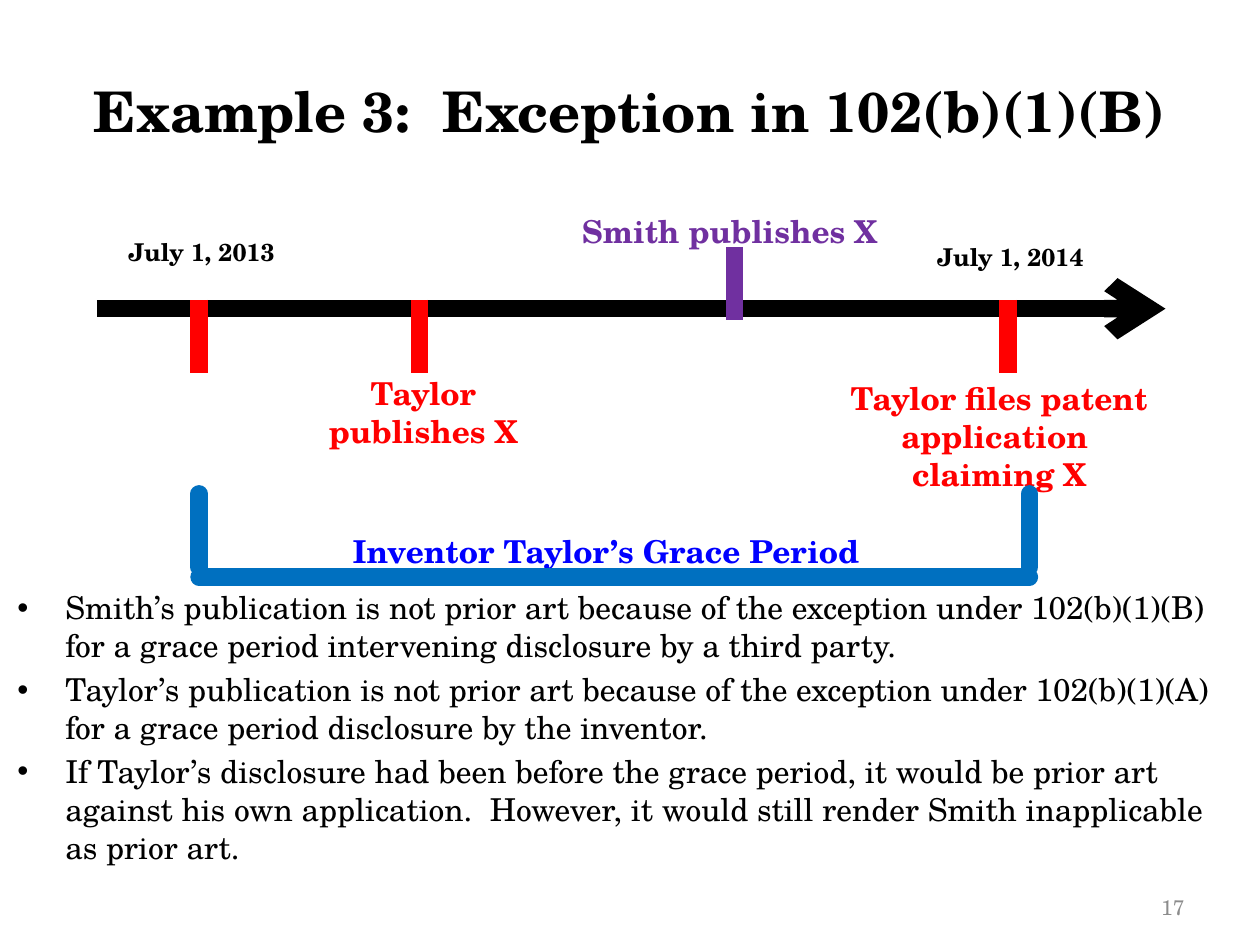
from lxml import etree
from pptx import Presentation
from pptx.dml.color import RGBColor
from pptx.enum import shapes, text
from pptx.oxml.ns import qn
from pptx.util import Inches, Pt

FONT = "TeX Gyre Schola"
BLACK = RGBColor(0x00, 0x00, 0x00)
GRAY = RGBColor(0x8C, 0x8C, 0x8C)
RED = RGBColor(0xFF, 0x00, 0x00)
PURPLE = RGBColor(0x70, 0x30, 0xA0)
BLUE = RGBColor(0x00, 0x00, 0xFF)
BRACKET_BLUE = RGBColor(0x00, 0x70, 0xC0)
LEFT, CENTER, RIGHT = text.PP_ALIGN.LEFT, text.PP_ALIGN.CENTER, text.PP_ALIGN.RIGHT
TOP, MIDDLE, BOTTOM = text.MSO_ANCHOR.TOP, text.MSO_ANCHOR.MIDDLE, text.MSO_ANCHOR.BOTTOM

# Content: wording, (left, top, width, height), size, colour, bold, alignment, anchor
LABELS = [
    ("Example 3:  Exception in 102(b)(1)(B)", (0, 0.25, 10, 1.25), 32, BLACK, True, CENTER, MIDDLE),
    ("17", (7.17, 6.83, 2.33, 0.52), 12, GRAY, False, RIGHT, BOTTOM),
    ("July 1, 2013", (0.92, 1.83, 1.54, 0.34), 14, BLACK, True, LEFT, TOP),
    ("July 1, 2014", (7.34, 1.87, 1.54, 0.34), 14, BLACK, True, LEFT, TOP),
    ("Smith publishes X", (4.5, 1.63, 2.58, 0.4), 18, PURPLE, True, CENTER, TOP),
    ("Taylor publishes X", (2.36, 2.92, 2, 0.71), 18, RED, True, CENTER, TOP),
    ("Taylor files patent application \nclaiming X", (6.58, 2.96, 2.7, 1.01), 18, RED, True, CENTER, TOP),
    ("Inventor Taylor’s Grace Period", (2.7, 4.17, 4.67, 0.4), 18, BLUE, True, LEFT, TOP),
]
NOTES = [
    "Smith’s publication is not prior art because of the exception under 102(b)(1)(B) "
    "for a grace period intervening disclosure by a third party.",
    "Taylor’s publication is not prior art because of the exception under 102(b)(1)(A) "
    "for a grace period disclosure by the inventor.",
    "If Taylor’s disclosure had been before the grace period, it would be prior art against "
    "his own application.  However, it would still render Smith inapplicable as prior art.",
]
NOTES_AREA = (0.04, 4.62, 9.75, 1.75)
NOTE_INDENT = Inches(0.38)

# Timeline geometry in inches
AXIS_START, AXIS_END, AXIS_Y = 0.77, 9.25, 2.45
TICK = 0.58
TICKS = [(1.58, 2.38, RED), (3.33, 2.38, RED), (8, 2.38, RED), (5.83, 1.96, PURPLE)]
BRACKET_LEFT, BRACKET_RIGHT, BRACKET_TOP, BRACKET_BASE = 1.58, 8.17, 3.92, 4.58


def style(para, size, color, bold=False, align=LEFT):
    para.alignment = align
    for span in para.runs:
        for name, value in dict(name=FONT, size=Pt(size), bold=bold).items():
            setattr(span.font, name, value)
        span.font.color.rgb = color


def add_box(page, area, anchor=TOP):
    frame = page.shapes.add_textbox(*map(Inches, area)).text_frame
    frame.word_wrap = True
    frame.vertical_anchor = anchor
    return frame


def add_line(parent, start, end, color, rounded=False, arrow=False):
    ends = map(Inches, (*start, *end))
    line = parent.shapes.add_connector(shapes.MSO_CONNECTOR.STRAIGHT, *ends)
    line.line.width = Pt(10)
    line.line.color.rgb = color
    outline = line.line._get_or_add_ln()
    if rounded:
        outline.set("cap", "rnd")
        etree.SubElement(outline, qn("a:round"))
    if arrow:
        etree.SubElement(outline, qn("a:tailEnd"), type="arrow")
    etree.SubElement(line._element.spPr, qn("a:effectLst"))


def add_bullet(para):
    props = para._p.get_or_add_pPr()
    props.set("marL", str(NOTE_INDENT))
    props.set("indent", str(-NOTE_INDENT))
    etree.SubElement(props, qn("a:buFont"), typeface="Arial")
    etree.SubElement(props, qn("a:buChar"), char="•")


def main():
    deck = Presentation()
    deck.slide_width, deck.slide_height = Inches(10), Inches(7.5)
    page = deck.slides.add_slide(deck.slide_layouts[6])

    # Timeline axis and event ticks
    add_line(page, (AXIS_START, AXIS_Y), (AXIS_END, AXIS_Y), BLACK, arrow=True)
    for x, y, color in TICKS:
        add_line(page, (x, y), (x, y + TICK), color)

    # Title, page number and event labels
    for words, area, size, color, bold, align, anchor in LABELS:
        para = add_box(page, area, anchor).paragraphs[0]
        para.text = words
        style(para, size, color, bold, align)

    # Bulleted explanation
    frame = add_box(page, NOTES_AREA)
    for index, words in enumerate(NOTES):
        para = frame.add_paragraph() if index else frame.paragraphs[0]
        add_bullet(para)
        para.text = words
        style(para, 18, BLACK)
        if index:
            para.space_before = Pt(3.6)

    # Grace period bracket
    bracket = page.shapes.add_group_shape()
    for x in (BRACKET_LEFT, BRACKET_RIGHT):
        add_line(bracket, (x, BRACKET_TOP), (x, BRACKET_TOP + TICK), BRACKET_BLUE, rounded=True)
    add_line(bracket, (BRACKET_RIGHT, BRACKET_BASE), (BRACKET_LEFT, BRACKET_BASE),
             BRACKET_BLUE, rounded=True)

    deck.save("out.pptx")


if __name__ == "__main__":
    main()
